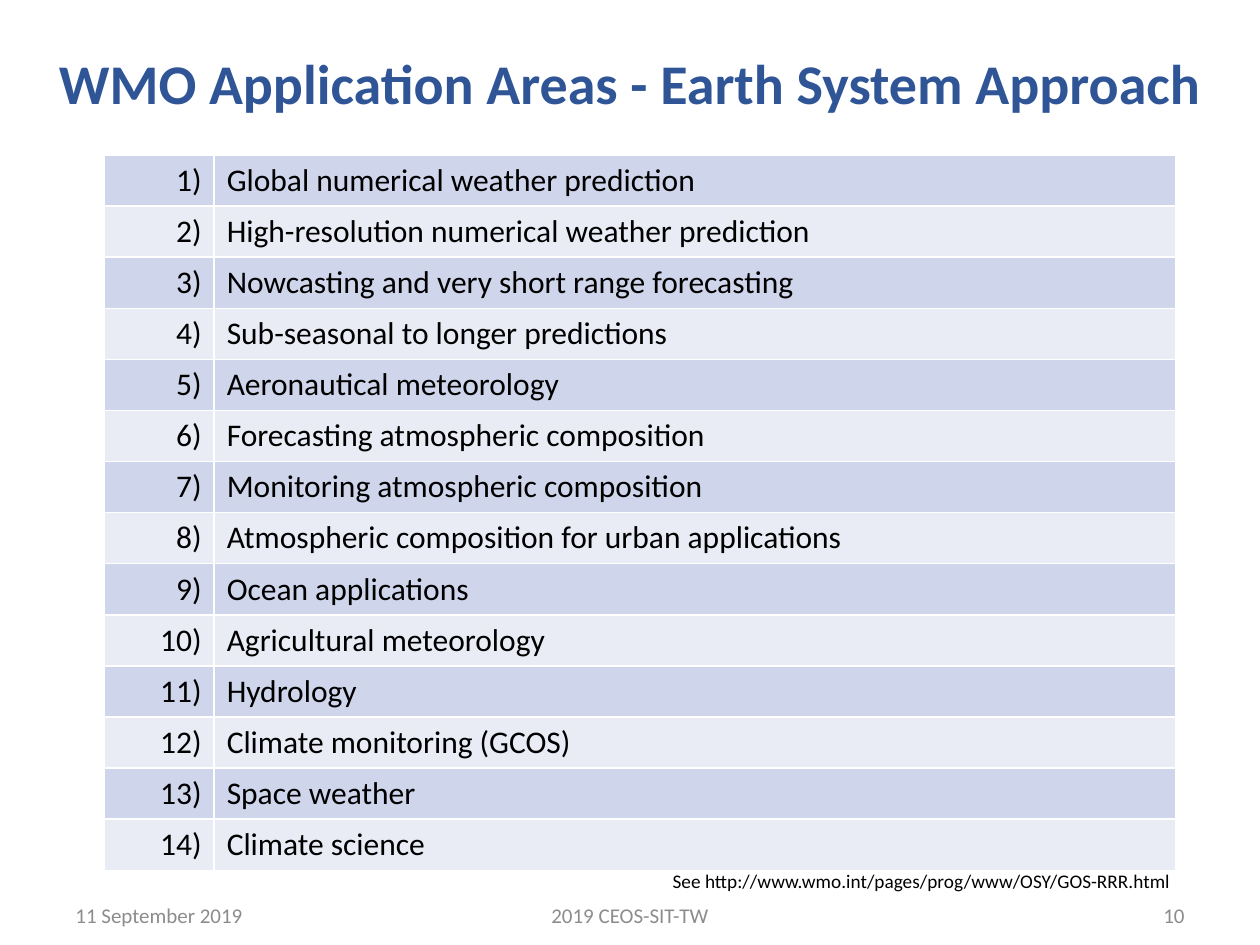
from dataclasses import dataclass

import pptx
import pptx.dml.color
import pptx.enum.text
import pptx.oxml
import pptx.oxml.ns
import pptx.util
from pptx.util import Inches

ALIGN = pptx.enum.text.PP_ALIGN
ANCHOR = pptx.enum.text.MSO_ANCHOR


@dataclass(frozen=True)
class Theme:
    font: str = "Calibri"
    title_color: str = "2F5597"
    text_color: str = "000000"
    footer_color: str = "8C8C8C"
    border_color: str = "FFFFFF"
    bands: tuple = ("CFD5EA", "E9EBF5")
    title_size: int = 32
    table_size: int = 18
    footer_size: int = 12
    source_size: int = 11


THEME = Theme()

APPLICATION_AREAS = [
    "Global numerical weather prediction",
    "High-resolution numerical weather prediction",
    "Nowcasting and very short range forecasting",
    "Sub-seasonal to longer predictions",
    "Aeronautical meteorology",
    "Forecasting atmospheric composition",
    "Monitoring atmospheric composition",
    "Atmospheric composition for urban applications",
    "Ocean applications",
    "Agricultural meteorology",
    "Hydrology",
    "Climate monitoring (GCOS)",
    "Space weather",
    "Climate science",
]


def rgb(value):
    return pptx.dml.color.RGBColor.from_string(value)


def write(text_frame, text, size, color, align=ALIGN.LEFT, bold=False):
    paragraph = text_frame.paragraphs[0]
    paragraph.alignment = align
    run = paragraph.add_run()
    run.text = text
    run.font.name = THEME.font
    run.font.size = pptx.util.Pt(size)
    run.font.bold = bold
    run.font.color.rgb = rgb(color)


def set_title(slide, text):
    title = slide.shapes.title
    title.left, title.top = Inches(0), Inches(0.21)
    title.width, title.height = Inches(10), Inches(0.88)
    title.text_frame.auto_size = pptx.enum.text.MSO_AUTO_SIZE.NONE
    title.text_frame.vertical_anchor = ANCHOR.MIDDLE
    write(title.text_frame, text, THEME.title_size, THEME.title_color,
          ALIGN.CENTER, bold=True)


def add_text(slide, text, left, top, width, height, size, color,
             align=ALIGN.LEFT, anchor=ANCHOR.TOP):
    box = slide.shapes.add_textbox(Inches(left), Inches(top),
                                   Inches(width), Inches(height))
    box.text_frame.word_wrap = True
    box.text_frame.vertical_anchor = anchor
    write(box.text_frame, text, size, color, align)


def add_footer(slide, text, left, width, align):
    add_text(slide, text, left, 7.14, width, 0.24, THEME.footer_size,
             THEME.footer_color, align, ANCHOR.MIDDLE)


def set_borders(cell):
    properties = cell._tc.get_or_add_tcPr()
    for position, side in enumerate(("lnL", "lnR", "lnT", "lnB")):
        line = pptx.oxml.parse_xml(
            f'<a:{side} {pptx.oxml.ns.nsdecls("a")} w="12700"><a:solidFill>'
            f'<a:srgbClr val="{THEME.border_color}"/></a:solidFill></a:{side}>')
        properties.insert(position, line)


def fill_cell(cell, text, band, align):
    cell.fill.solid()
    cell.fill.fore_color.rgb = rgb(band)
    set_borders(cell)
    write(cell.text_frame, text, THEME.table_size, THEME.text_color, align)


def add_numbered_table(slide, items):
    """Two columns: right-aligned numbers and their items, in banded rows."""
    frame = slide.shapes.add_table(len(items), 2, Inches(0.83), Inches(1.23),
                                   Inches(8.5), Inches(5.68))
    table = frame.table
    table.first_row = False
    table.horz_banding = False
    table.columns[0].width = Inches(0.87)
    table.columns[1].width = Inches(7.63)
    for index, item in enumerate(items):
        band = THEME.bands[index % 2]
        fill_cell(table.cell(index, 0), f"{index + 1})", band, ALIGN.RIGHT)
        fill_cell(table.cell(index, 1), item, band, ALIGN.LEFT)


def main():
    presentation = pptx.Presentation()
    presentation.slide_width = Inches(10)
    presentation.slide_height = Inches(7.5)
    slide = presentation.slides.add_slide(presentation.slide_layouts[5])
    set_title(slide, "WMO Application Areas - Earth System Approach")
    add_footer(slide, "11 September 2019", 0.5, 2.25, ALIGN.LEFT)
    add_footer(slide, "2019 CEOS-SIT-TW", 2.56, 4.88, ALIGN.CENTER)
    add_footer(slide, "10", 7.25, 2.25, ALIGN.RIGHT)
    add_numbered_table(slide, APPLICATION_AREAS)
    add_text(slide, "See http://www.wmo.int/pages/prog/www/OSY/GOS-RRR.html",
             5.24, 6.85, 4.76, 0.29, THEME.source_size, THEME.text_color)
    presentation.save("out.pptx")


if __name__ == "__main__":
    main()
